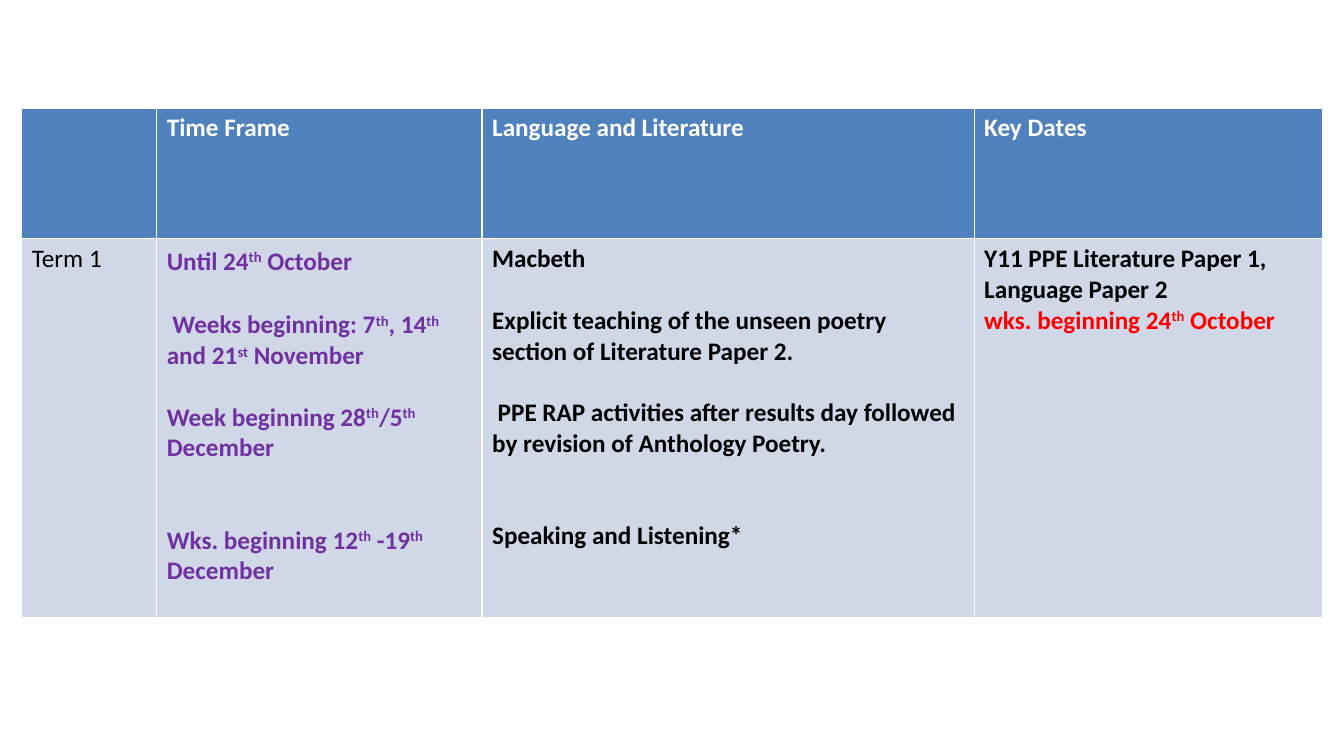
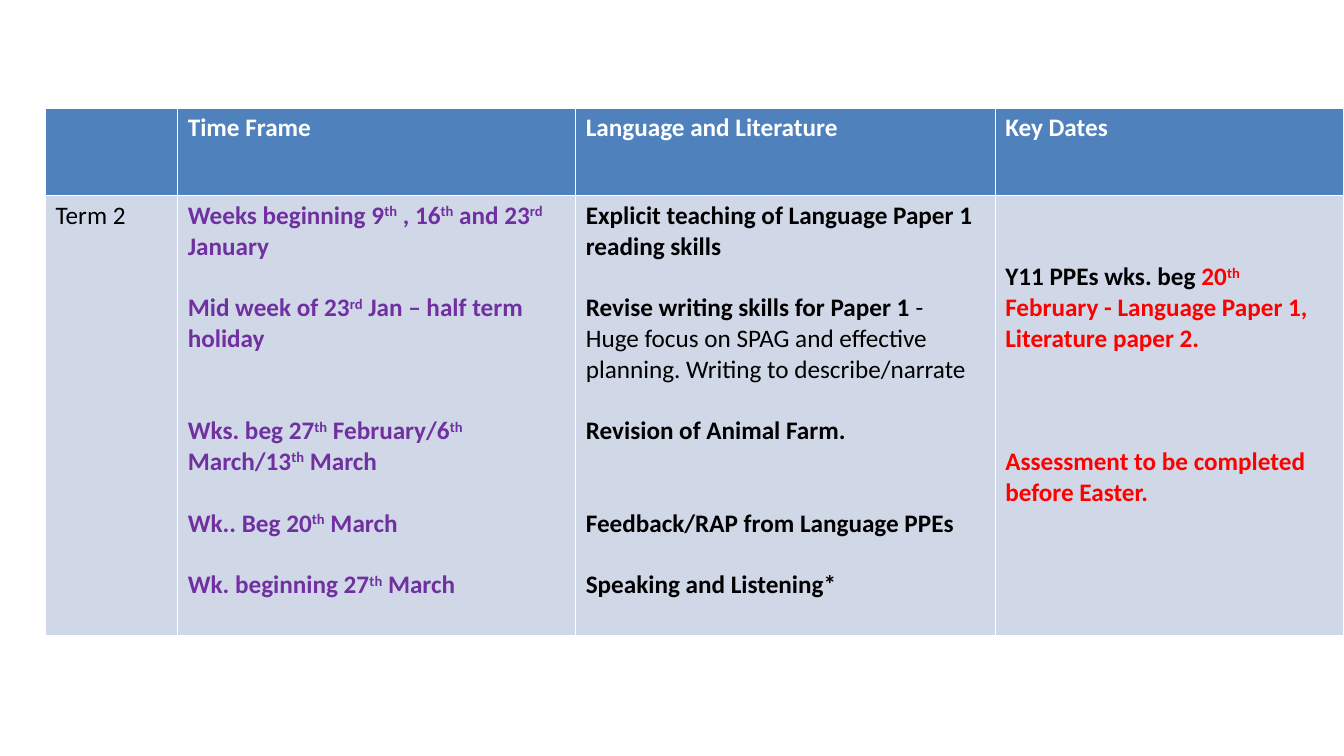
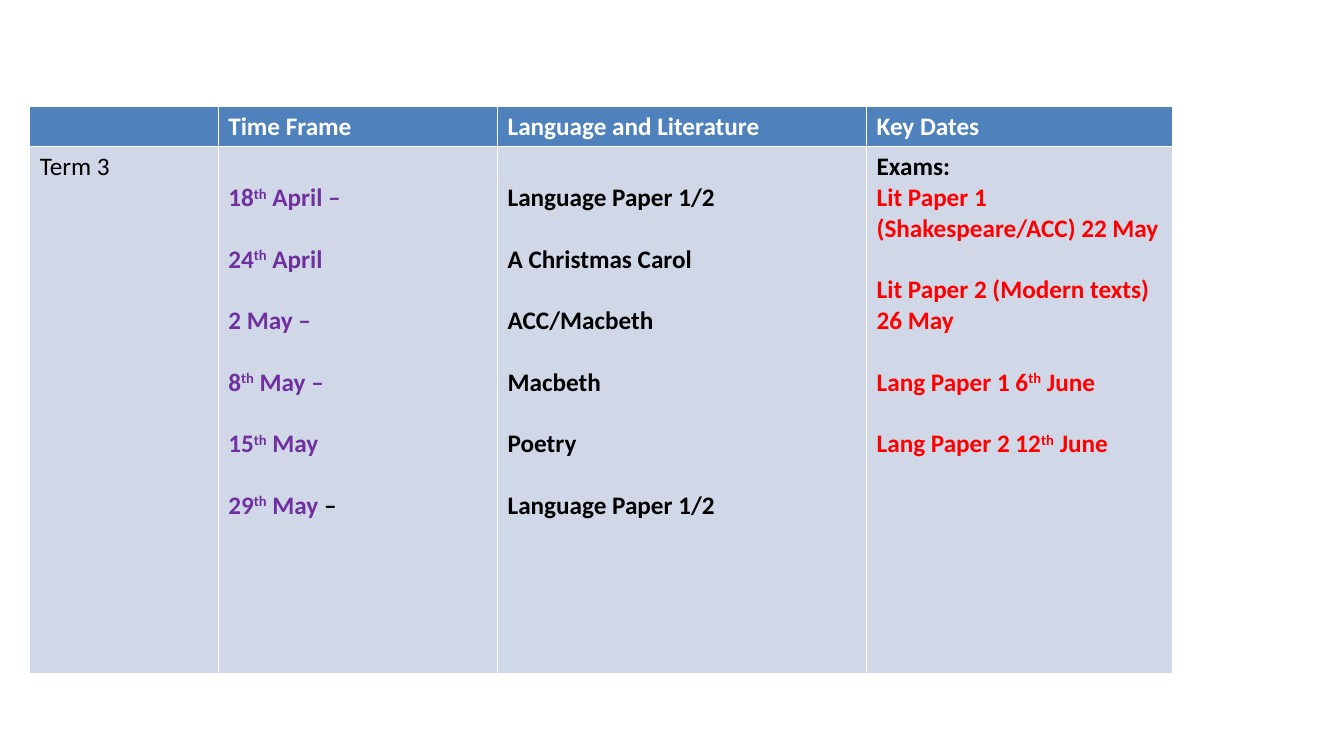
from dataclasses import dataclass
from typing import Optional

from pptx import Presentation
from pptx.dml.color import RGBColor as Rgb
from pptx.util import Cm, Pt


@dataclass(frozen=True)
class Theme:
    font: str = "Calibri"
    size: float = 18
    pitch: float = 22
    inset: float = 3.6
    white: Rgb = Rgb(0xFF, 0xFF, 0xFF)
    black: Rgb = Rgb(0, 0, 0)
    date: Rgb = Rgb(0x70, 0x30, 0xA0)
    alert: Rgb = Rgb(0xFF, 0, 0)
    head: Rgb = Rgb(0x4F, 0x81, 0xBD)
    body: Rgb = Rgb(0xD0, 0xD8, 0xE8)


THEME = Theme()
HEADS = ("", "Time Frame", "Language and Literature", "Key Dates")
INKS = (THEME.black, THEME.date, THEME.black, THEME.alert)


@dataclass(frozen=True)
class Tail:
    """The end of a line that differs in colour or weight."""
    text: str
    ink: Rgb
    bold: bool = True
    wrap: str = ""


@dataclass(frozen=True)
class Line:
    """One paragraph; ^ marks raised text, gap counts lines left free above."""
    text: str
    gap: float = 0
    ink: Optional[Rgb] = None
    bold: bool = True
    lead: float = 1
    indent: float = 0
    tail: Optional[Tail] = None


@dataclass(frozen=True)
class Term:
    left: float
    top: float
    cols: tuple[float, ...]
    rows: tuple[float, float]
    name: str
    dates: tuple[Line, ...]
    topics: tuple[Line, ...]
    keys: tuple[Line, ...]


TERMS = (
    Term(
        0.55, 2.72, (3.4, 8.2, 12.4, 8.79), (3.3, 9.53), "Term 1",
        dates=(
            Line("Until 24^th^ October", lead=1.07),
            Line("Weeks beginning: 7^th^, 14^th^ and 21^st^ November", 1.07, indent=0.14),
            Line("Week beginning 28^th^/5^th^ December", 1),
            Line("Wks. beginning 12^th^ -19^th^ December", 2),
        ),
        topics=(
            Line("Macbeth"),
            Line("Explicit teaching of the unseen poetry section of Literature Paper 2.", 1),
            Line("PPE RAP activities after results day followed by revision of "
                 "Anthology Poetry.", 1, indent=0.14),
            Line("Speaking and Listening*", 2),
        ),
        keys=(
            Line("Y11 PPE Literature Paper 1,", ink=THEME.black),
            Line("Language Paper 2", ink=THEME.black),
            Line("wks. beginning 24^th^ October"),
        ),
    ),
    Term(
        1.15, 2.72, (3.33, 10.03, 10.57, 8.79), (2.2, 11.1), "Term 2",
        dates=(
            Line("Weeks beginning 9^th^ , 16^th^ and 23^rd^ January"),
            Line("Mid week of 23^rd^ Jan – half term holiday", 1),
            Line("Wks. beg 27^th^ February/6^th^ March/13^th^ March", 2),
            Line("Wk.. Beg 20^th^ March", 1),
            Line("Wk. beginning 27^th^ March", 1),
        ),
        topics=(
            Line("Explicit teaching of Language Paper 1 reading skills"),
            Line("Revise writing skills for Paper 1 ", 1, tail=Tail(
                "-", THEME.black, False,
                "Huge focus on SPAG and effective planning. Writing to describe/narrate")),
            Line("Revision of Animal Farm.", 1),
            Line("Feedback/RAP from Language PPEs", 2),
            Line("Speaking and Listening*", 1),
        ),
        keys=(
            Line("Y11 PPEs wks. beg ", 2, THEME.black, tail=Tail(
                "20^th^ February - Language Paper 1, Literature paper 2.", THEME.alert)),
            Line("Assessment to be completed before Easter.", 3),
        ),
    ),
    Term(
        0.75, 2.67, (4.75, 7.04, 9.3, 7.72), (1.03, 13.28), "Term 3",
        dates=(
            Line("18^th^ April –", 1),
            Line("24^th^ April", 1),
            Line("2 May –", 1),
            Line("8^th^ May –", 1),
            Line("15^th^ May", 1),
            Line("29^th^ May ", 1, tail=Tail("–", THEME.black)),
        ),
        topics=tuple(Line(topic, 1) for topic in (
            "Language Paper 1/2", "A Christmas Carol", "ACC/Macbeth",
            "Macbeth", "Poetry", "Language Paper 1/2")),
        keys=(
            Line("Exams:", ink=THEME.black),
            Line("Lit Paper 1 (Shakespeare/ACC) 22 May"),
            Line("Lit Paper 2 (Modern texts) 26 May", 1),
            Line("Lang Paper 1 6^th^ June", 1),
            Line("Lang Paper 2 12^th^ June", 1),
        ),
    ),
)


def add_runs(para, text: str) -> list:
    """Add text to a paragraph, raising the parts between ^ marks."""
    runs = []
    for pos, part in enumerate(text.split("^")):
        if part:
            run = para.add_run()
            run.text = part
            if pos % 2:
                run._r.get_or_add_rPr().set("baseline", "30000")
            runs.append(run)
    return runs


def set_font(font, ink: Rgb, bold: bool) -> None:
    font.name, font.size, font.bold = THEME.font, Pt(THEME.size), bold
    font.color.rgb = ink


def add_tail(para, tail: Tail) -> None:
    runs = add_runs(para, tail.text)
    if tail.wrap:
        para.add_line_break()
        runs += add_runs(para, tail.wrap)
    for run in runs:
        set_font(run.font, tail.ink, tail.bold)


def fill_cell(cell, lines: tuple[Line, ...], fill: Rgb, ink: Rgb) -> None:
    """Write lines into a cell; the first gap becomes its top margin."""
    cell.fill.solid()
    cell.fill.fore_color.rgb = fill
    cell.margin_top = Pt(THEME.inset + lines[0].gap * THEME.pitch)
    frame = cell.text_frame
    for pos, line in enumerate(lines):
        para = frame.add_paragraph() if pos else frame.paragraphs[0]
        if pos and line.gap:
            para.space_before = Pt(line.gap * THEME.pitch)
        if line.lead != 1:
            para.line_spacing = line.lead
        if line.indent:
            para._p.get_or_add_pPr().set("indent", str(Cm(line.indent)))
        set_font(para.font, line.ink or ink, line.bold)
        add_runs(para, line.text)
        if line.tail:
            add_tail(para, line.tail)


def add_term(deck, term: Term) -> None:
    slide = deck.slides.add_slide(deck.slide_layouts[6])
    table = slide.shapes.add_table(
        2, len(term.cols), Cm(term.left), Cm(term.top),
        Cm(sum(term.cols)), Cm(sum(term.rows))).table
    table.horz_banding = False
    for row, high in zip(table.rows, term.rows):
        row.height = Cm(high)
    body = ((Line(term.name, bold=False),), term.dates, term.topics, term.keys)
    for col, (wide, head, lines, ink) in enumerate(zip(term.cols, HEADS, body, INKS)):
        table.columns[col].width = Cm(wide)
        fill_cell(table.cell(0, col), (Line(head),), THEME.head, THEME.white)
        fill_cell(table.cell(1, col), lines, THEME.body, ink)


def main() -> None:
    deck = Presentation()
    deck.slide_width, deck.slide_height = Cm(33.87), Cm(19.05)
    for term in TERMS:
        add_term(deck, term)
    deck.save("out.pptx")


if __name__ == "__main__":
    main()
